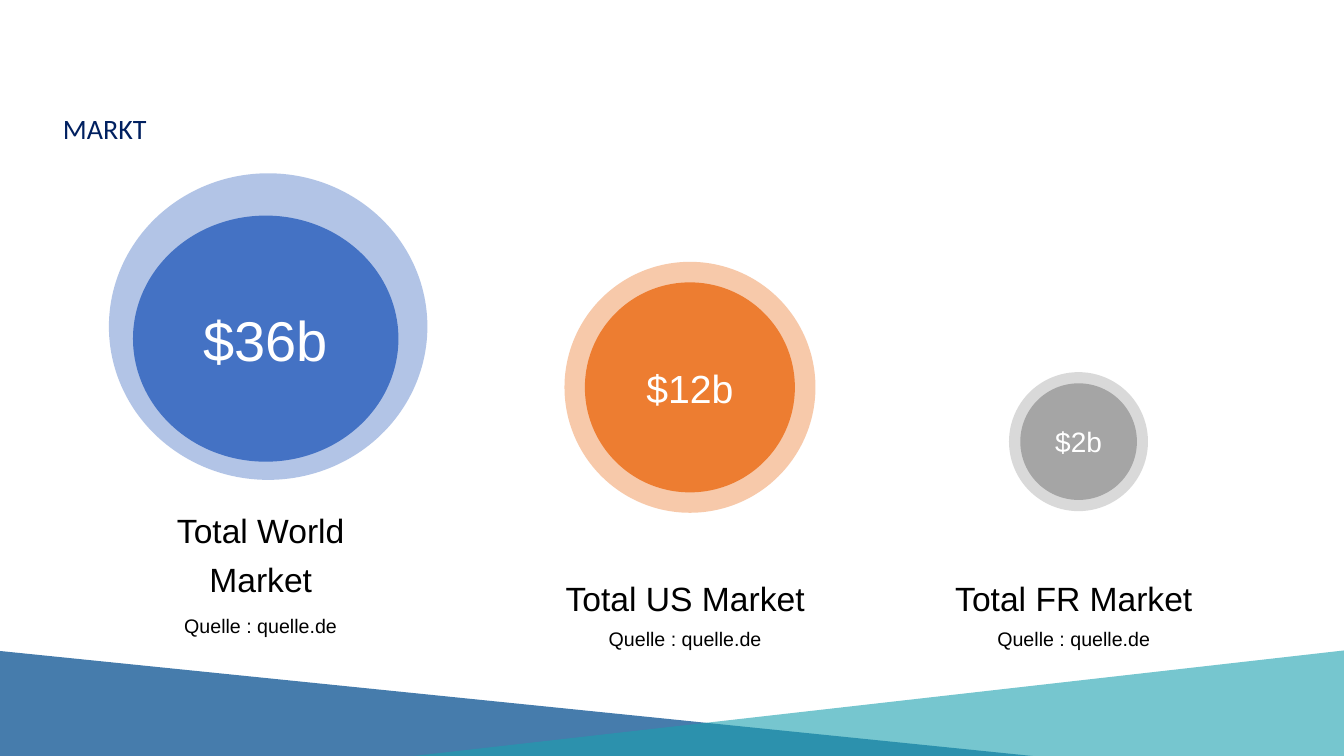
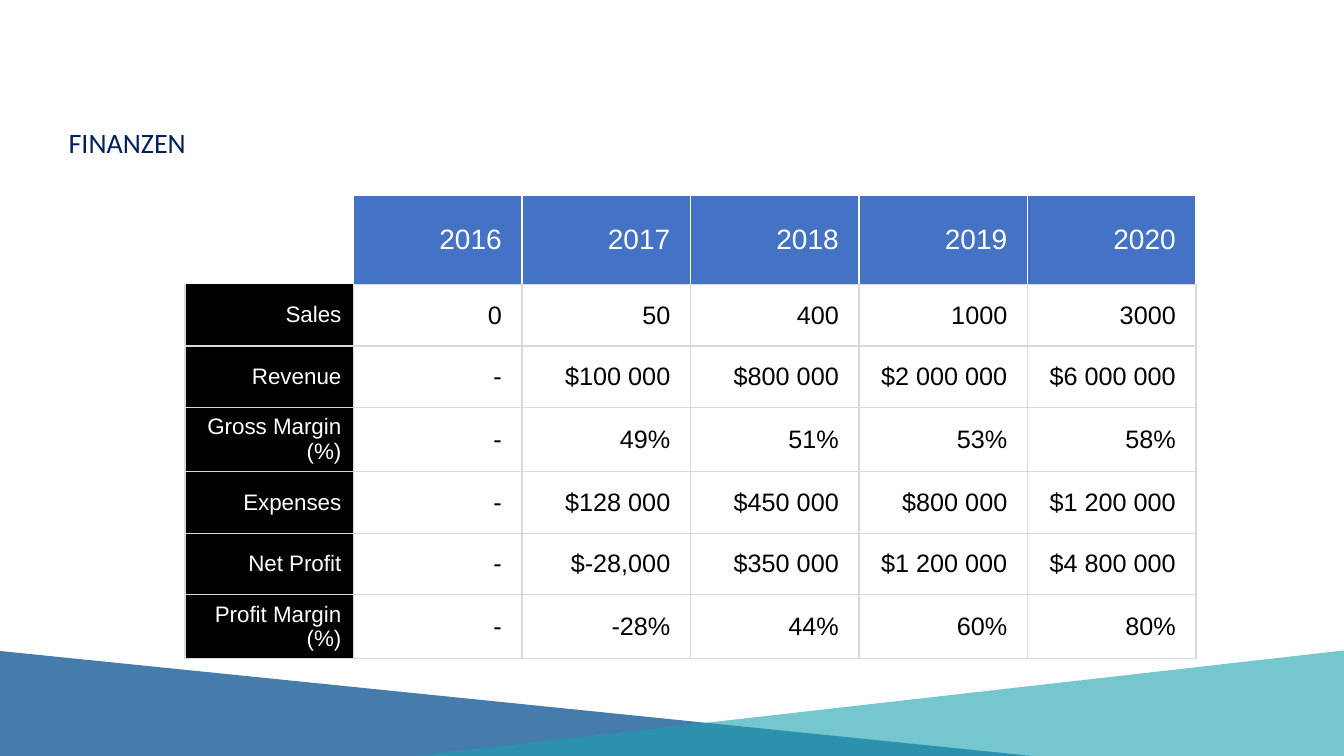
from dataclasses import dataclass
from typing import Any, NamedTuple

from lxml.etree import SubElement
from pptx import Presentation
from pptx.dml.color import RGBColor as RGB
from pptx.enum.shapes import MSO_SHAPE as SHAPE
from pptx.enum.text import MSO_ANCHOR as ANCHOR, MSO_AUTO_SIZE as AUTO, PP_ALIGN as ALIGN
from pptx.oxml.ns import qn
from pptx.util import Pt


# Theme
@dataclass(frozen=True)
class Theme:
    heading_font: str = "Calibri"
    body_font: str = "Arial"
    navy: str = "002060"
    band_blue: str = "095191"
    band_teal: str = "1BA0AF"
    blue: str = "4472C4"
    orange: str = "ED7D31"
    grey: str = "A5A5A5"
    rule: str = "D9D9D9"
    black: str = "000000"
    white: str = "FFFFFF"
    title_size: int = 20
    caption_size: int = 24
    source_size: int = 14
    year_size: int = 20
    label_size: int = 16
    figure_size: int = 18
    halo_alpha: int = 41


T = Theme()
WIDTH, HEIGHT = 960, 540


class Box(NamedTuple):
    left: float
    top: float
    width: float
    height: float

    def pts(self) -> list[Pt]:
        return [Pt(v) for v in self]


class TextStyle(NamedTuple):
    size: int
    color: str
    align: ALIGN = ALIGN.CENTER
    font: str = T.body_font
    spacing: float = 1.0


@dataclass(frozen=True)
class Band:
    box: Box
    apex: float
    color: str
    alpha: int


@dataclass(frozen=True)
class Market:
    value: str
    size: int
    color: str
    halo: Box
    disc: Box
    caption: str
    text_left: float
    caption_top: float
    source_top: float


BANDS = (
    Band(Box(-553, 464.7, 1421.3, 88.6), 0.387, T.band_blue, 75),
    Band(Box(141.1, 464.6, 1638, 92.9), 0.5, T.band_teal, 60),
)
MARKETS = (
    Market("$36b", 40, T.blue, Box(77.8, 123.8, 227.5, 219), Box(95, 154, 189.6, 175.8),
           "Total World Market", 88, 355, 431.5),
    Market("$12b", 28, T.orange, Box(403.2, 187, 179.3, 179.3), Box(417.8, 201.7, 150, 150),
           "Total US Market", 391.2, 403.5, 441.2),
    Market("$2b", 20, T.grey, Box(720.7, 265.8, 99.3, 99.3), Box(728.8, 273.8, 83.3, 83.3),
           "Total FR Market", 668.8, 403.5, 441.2),
)
SOURCE = "Quelle : quelle.de"
FINANCES = (
    ("", "2016", "2017", "2018", "2019", "2020"),
    ("Sales", "0", "50", "400", "1000", "3000"),
    ("Revenue", "-", "$100 000", "$800 000", "$2 000 000", "$6 000 000"),
    ("Gross Margin (%)", "-", "49%", "51%", "53%", "58%"),
    ("Expenses", "-", "$128 000", "$450 000", "$800 000", "$1 200 000"),
    ("Net Profit", "-", "$-28,000", "$350 000", "$1 200 000", "$4 800 000"),
    ("Profit Margin (%)", "-", "-28%", "44%", "60%", "80%"),
)
HEADER_HEIGHT, ROW_HEIGHT, TWO_LINE_HEIGHT = 63.5, 44, 45.7
TITLE_STYLE = TextStyle(T.title_size, T.navy, ALIGN.LEFT, T.heading_font)
CAPTION_STYLE = TextStyle(T.caption_size, T.black, spacing=1.2)
SOURCE_STYLE = TextStyle(T.source_size, T.black, spacing=1.2)


# Helpers
def apply(obj: Any, values: dict[str, Any]) -> None:
    for name, value in values.items():
        setattr(obj, name, value)


def write(tf: Any, text: str, style: TextStyle) -> None:
    p = tf.paragraphs[0]
    apply(p, {"alignment": style.align, "line_spacing": style.spacing})
    r = p.add_run()
    r.text = text
    apply(r.font, {"name": style.font, "size": Pt(style.size), "bold": False})
    r.font.color.rgb = RGB.from_string(style.color)


def add_text(s: Any, box: Box, text: str, style: TextStyle) -> None:
    tf = s.shapes.add_textbox(*box.pts()).text_frame
    apply(tf, {"word_wrap": True, "auto_size": AUTO.SHAPE_TO_FIT_TEXT, "margin_left": 0})
    write(tf, text, style)


def add_preset(shapes: Any, kind: SHAPE, box: Box, color: str, alpha: int = 100) -> Any:
    sp = shapes.add_shape(kind, *box.pts())
    sp.shadow.inherit = False
    sp.line.fill.background()
    sp.fill.solid()
    sp.fill.fore_color.rgb = RGB.from_string(color)
    if alpha < 100:
        clr = sp.element.spPr.find(f"{qn('a:solidFill')}/{qn('a:srgbClr')}")
        SubElement(clr, qn("a:alpha"), val=str(alpha * 1000))
    return sp


# Shared bands and title
def add_bands(s: Any) -> None:
    """Draw the bands and move them to the layout, behind its placeholders."""
    tree = s.slide_layout.shapes.element
    for i, band in enumerate(BANDS):
        sp = add_preset(s.shapes, SHAPE.ISOSCELES_TRIANGLE, band.box, band.color, band.alpha)
        sp.adjustments[0] = band.apex
        tree.insert(2 + i, sp.element)


def set_title(s: Any, text: str, left: float, top: float) -> None:
    title = s.shapes.title
    box = Box(left, top, 715, 32)
    apply(title, dict(zip(("left", "top", "width", "height"), box.pts())))
    apply(title.text_frame, {"vertical_anchor": ANCHOR.TOP, "word_wrap": True,
                             "auto_size": AUTO.NONE})
    write(title.text_frame, text, TITLE_STYLE)


# Market slide
def add_market(s: Any, m: Market) -> None:
    group = s.shapes.add_group_shape()
    add_preset(group.shapes, SHAPE.OVAL, m.halo, m.color, T.halo_alpha)
    disc = add_preset(group.shapes, SHAPE.OVAL, m.disc, m.color)
    disc.text_frame.vertical_anchor = ANCHOR.MIDDLE
    write(disc.text_frame, m.value, TextStyle(m.size, T.white))
    add_text(s, Box(m.text_left, m.caption_top, 203.5, 42.5), m.caption, CAPTION_STYLE)
    add_text(s, Box(m.text_left, m.source_top, 203.5, 26), SOURCE, SOURCE_STYLE)


# Finance table
def set_borders(cell: Any, colors: dict[str, str | None]) -> None:
    """Draw one-point edges in the order L, R, T, B; None hides an edge."""
    tc_pr = cell._tc.get_or_add_tcPr()
    for side, color in colors.items():
        ln = SubElement(tc_pr, qn(f"a:ln{side}"), w=str(Pt(1)))
        if color is None:
            SubElement(ln, qn("a:noFill"))
        else:
            SubElement(SubElement(ln, qn("a:solidFill")), qn("a:srgbClr"), val=color)


def format_cell(cell: Any, row: int, col: int, text: str) -> None:
    edges: dict[str, str | None] = dict.fromkeys("LRTB", T.rule)
    size, color, fill = T.figure_size, T.black, None
    if row == 0 and col == 0:
        edges = dict.fromkeys("LRTB")
    elif row == 0:
        edges = dict.fromkeys("LRT", T.white) | {"B": T.rule}
        size, color, fill = T.year_size, T.white, T.blue
    elif col == 0:
        size, color, fill = T.label_size, T.white, T.black
        if row == 1:
            edges["T"] = None
    set_borders(cell, edges)
    if fill:
        cell.fill.solid()
        cell.fill.fore_color.rgb = RGB.from_string(fill)
    else:
        cell.fill.background()
    apply(cell, {"vertical_anchor": ANCHOR.MIDDLE, "margin_left": Pt(7.2),
                 "margin_right": Pt(14.4 if col else 8.64),
                 "margin_top": Pt(3.6), "margin_bottom": Pt(3.6)})
    if text:
        write(cell.text_frame, text, TextStyle(size, color, ALIGN.RIGHT))


def row_height(label: str) -> float:
    if not label:
        return HEADER_HEIGHT
    return TWO_LINE_HEIGHT if label.endswith("(%)") else ROW_HEIGHT


def add_finances(s: Any) -> None:
    rows, cols = len(FINANCES), len(FINANCES[0])
    heights = [row_height(values[0]) for values in FINANCES]
    box = Box(132.1, 139.7, 722.2, sum(heights))
    table = s.shapes.add_table(rows, cols, *box.pts()).table
    apply(table, {"first_row": False, "horz_banding": False})
    for col in table.columns:
        col.width = Pt(round(box.width / cols, 2))
    for i, values in enumerate(FINANCES):
        table.rows[i].height = Pt(heights[i])
        for j, text in enumerate(values):
            format_cell(table.cell(i, j), i, j, text)


def main() -> None:
    prs = Presentation()
    apply(prs, {"slide_width": Pt(WIDTH), "slide_height": Pt(HEIGHT)})
    title_only = prs.slide_layouts[5]

    s = prs.slides.add_slide(title_only)
    add_bands(s)
    set_title(s, "MARKT", 37.8, 76)
    for market in MARKETS:
        add_market(s, market)

    s = prs.slides.add_slide(title_only)
    set_title(s, "FINANZEN", 41.8, 86)
    add_finances(s)

    prs.save("out.pptx")


if __name__ == "__main__":
    main()
